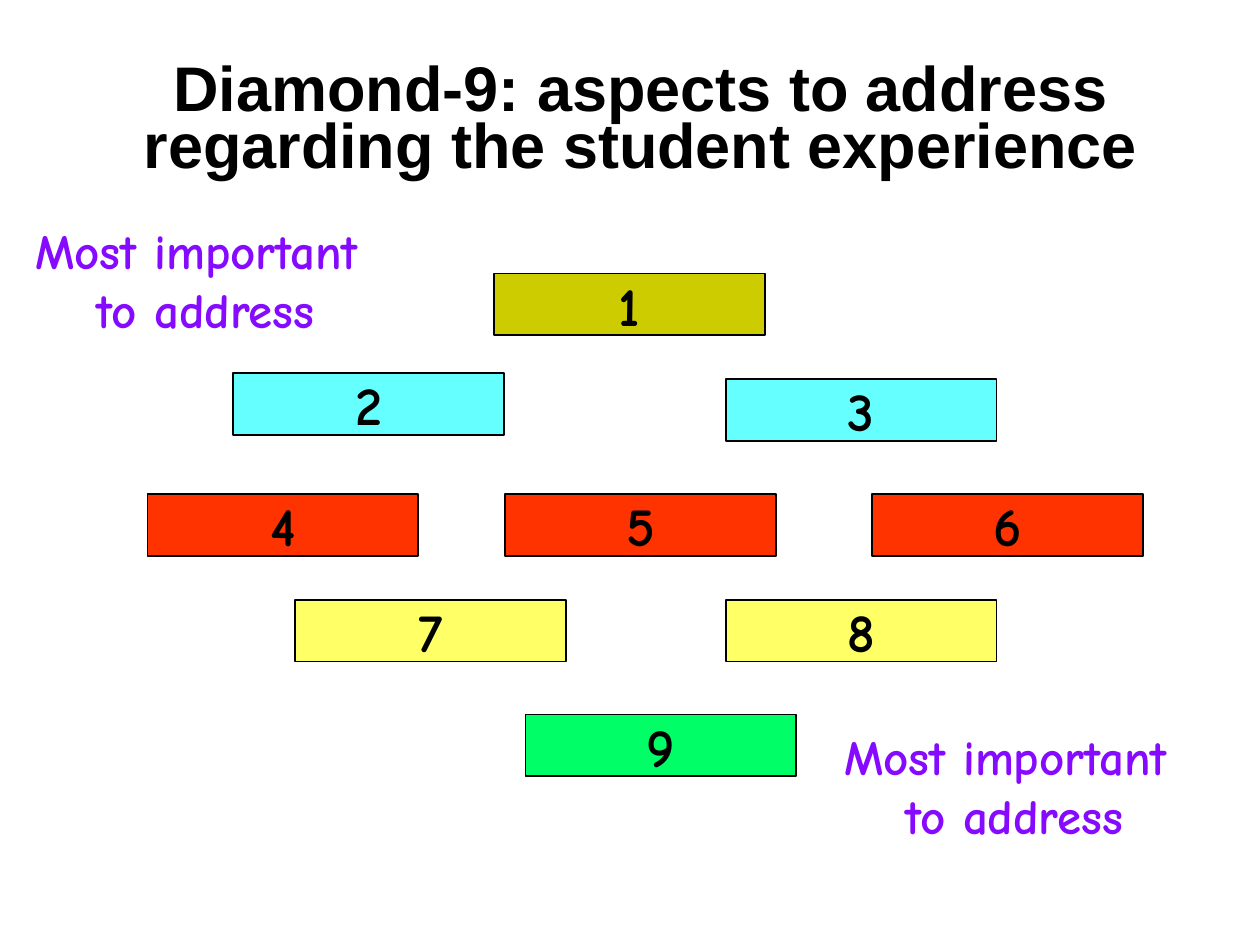
import pptx
import pptx.util
import pptx.dml.color
import pptx.enum.shapes
import pptx.enum.text

Inches = pptx.util.Inches
MID = pptx.enum.text.MSO_ANCHOR.MIDDLE
TOP = pptx.enum.text.MSO_ANCHOR.TOP
HEX = {
    "ink": "000000", "note": "850AFF", "olive": "CCCC00", "cyan": "66FFFF",
    "red": "FF3300", "lemon": "FFFF66", "green": "00FF66",
}
ROWS = [
    ("olive", [(3.92, 2.17)]),
    ("cyan", [(1.85, 2.96), (5.76, 3.01)]),
    ("red", [(1.17, 3.92), (4.01, 3.92), (6.92, 3.92)]),
    ("lemon", [(2.34, 4.76), (5.76, 4.76)]),
    ("green", [(4.17, 5.67)]),
]


def tint(name):
    return pptx.dml.color.RGBColor.from_string(HEX[name])


def apply(item, values):
    for key, value in values.items():
        setattr(item, key, value)


class Deck:
    fonts = {
        "title": {"name": "Arial", "size": pptx.util.Pt(36), "bold": True},
        "card": {"name": "Comic Neue", "size": pptx.util.Pt(31), "bold": True},
        "note": {"name": "Comic Neue", "size": pptx.util.Pt(28), "bold": True},
    }

    def __init__(self, show):
        self.slide = show.slides.add_slide(show.slide_layouts[5])

    def label(self, shape, lines, style, color, frame, para=None):
        text = shape.text_frame
        text.text = "\n".join(lines)
        apply(text, frame)
        for line in text.paragraphs:
            apply(line, {"alignment": pptx.enum.text.PP_ALIGN.CENTER, **(para or {})})
            apply(line.font, self.fonts[style])
            line.font.color.rgb = tint(color)

    def title(self, words, left, top, width, height):
        shape = self.slide.shapes.title
        apply(shape, {"left": Inches(left), "top": Inches(top),
                      "width": Inches(width), "height": Inches(height)})
        frame = {"vertical_anchor": MID, "word_wrap": True,
                 "auto_size": pptx.enum.text.MSO_AUTO_SIZE.NONE}
        self.label(shape, [words], "title", "ink", frame, {"line_spacing": 0.75})

    def card(self, words, left, top, color):
        shape = self.slide.shapes.add_shape(
            pptx.enum.shapes.MSO_SHAPE.RECTANGLE,
            Inches(left), Inches(top), Inches(2.15), Inches(0.49))
        shape.shadow.inherit = False
        shape.fill.solid()
        shape.fill.fore_color.rgb = tint(color)
        shape.line.color.rgb = tint("ink")
        shape.line.width = pptx.util.Pt(1)
        self.label(shape, [words], "card", "ink",
                   {"vertical_anchor": MID, "word_wrap": False})

    def note(self, lines, left, top):
        shape = self.slide.shapes.add_textbox(
            Inches(left), Inches(top), Inches(3.12), Inches(1.04))
        frame = {"vertical_anchor": TOP, "word_wrap": False,
                 "auto_size": pptx.enum.text.MSO_AUTO_SIZE.SHAPE_TO_FIT_TEXT}
        self.label(shape, lines, "note", "note", frame)


def main():
    show = pptx.Presentation()
    apply(show, {"slide_width": Inches(10), "slide_height": Inches(7.5)})
    deck = Deck(show)
    deck.title("Diamond-9: aspects to address regarding the student experience",
               0.17, 0.38, 9.83, 1.19)
    rank = 1
    for color, spots in ROWS:
        for left, top in spots:
            deck.card(str(rank), left, top, color)
            rank += 1
    for left, top in [(0, 1.7), (6.42, 5.72)]:
        deck.note(["Most important", " to address"], left, top)
    show.save("out.pptx")


if __name__ == "__main__":
    main()
